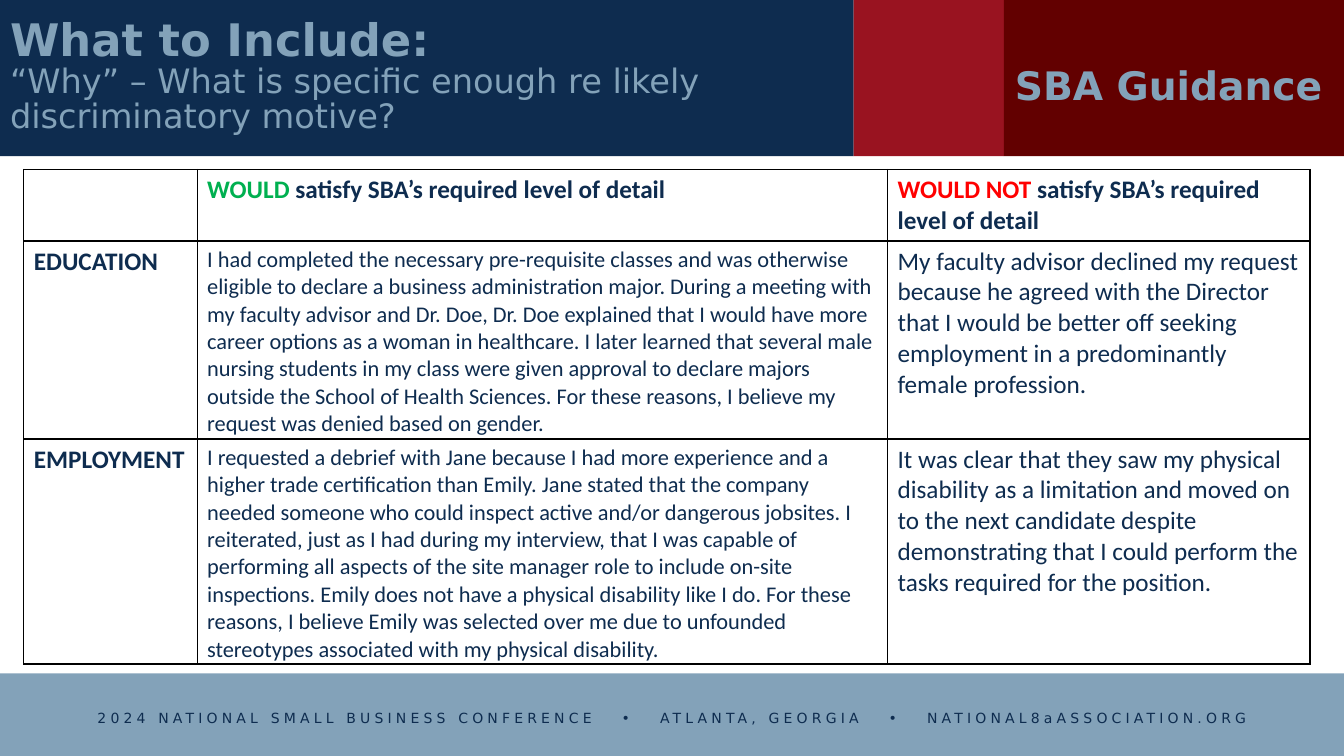
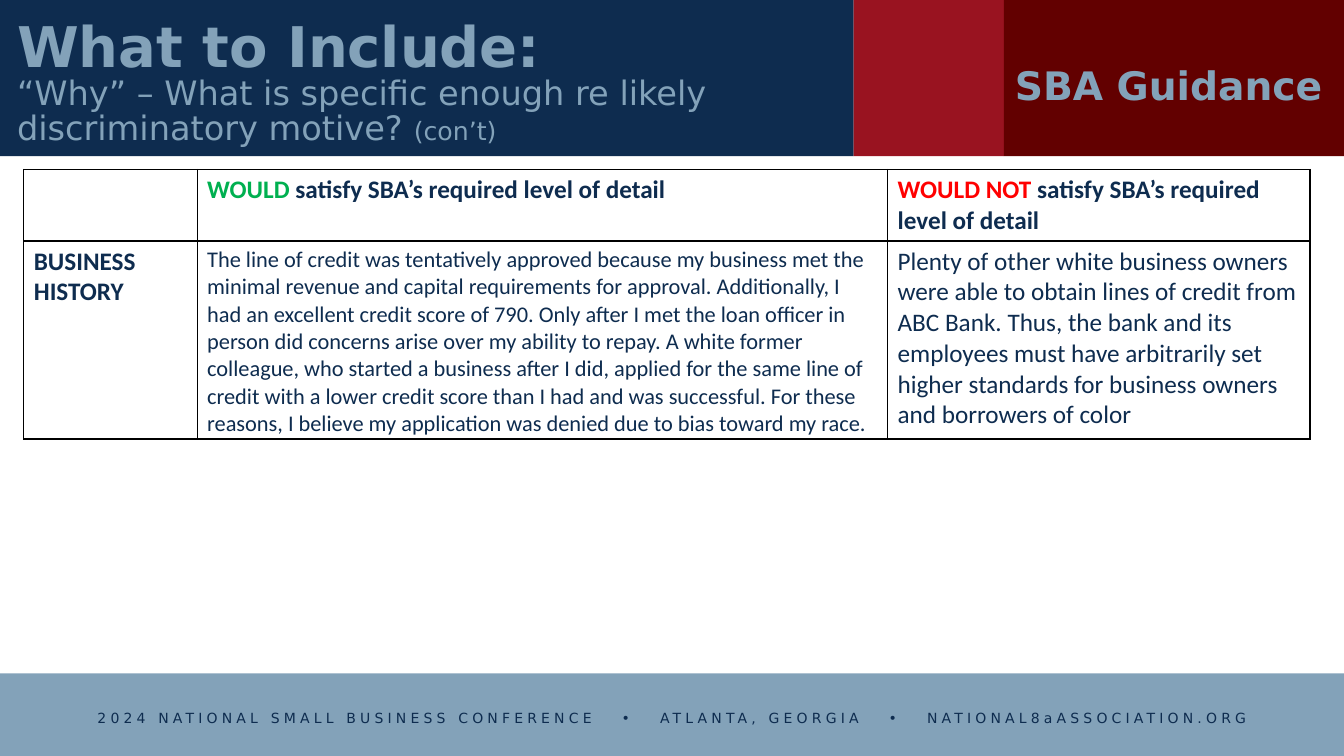
"""Build two conference slides that compare sufficient and insufficient statements of motive."""

import copy
import dataclasses
from typing import NamedTuple

import lxml.etree
import pptx
import pptx.dml.color
import pptx.enum.shapes
import pptx.enum.text
import pptx.oxml.ns
import pptx.shapes.autoshape
import pptx.slide
import pptx.table
import pptx.text.text
import pptx.util

Pt = pptx.util.Pt
Color = pptx.dml.color.RGBColor
qn = pptx.oxml.ns.qn


@dataclasses.dataclass(frozen=True)
class Theme:
    navy: Color = Color(0x0E, 0x2C, 0x4F)
    red: Color = Color(0x99, 0x13, 0x20)
    maroon: Color = Color(0x62, 0x00, 0x00)
    steel: Color = Color(0x83, 0xA2, 0xB9)
    good: Color = Color(0x00, 0xB0, 0x50)
    bad: Color = Color(0xFF, 0x00, 0x00)
    border: Color = Color(0x00, 0x00, 0x00)
    heading_font: str = "DejaVu Sans"
    table_font: str = "Calibri"
    subtitle_size: float = 24
    tag_size: float = 28
    large_size: float = 18
    detail_size: float = 16
    footer_size: float = 10
    title_spacing: float = 0.85


THEME = Theme()


class Box(NamedTuple):
    left: float
    top: float
    width: float
    height: float

    def lengths(self) -> list[int]:
        return [Pt(value) for value in self]


class Band(NamedTuple):
    box: Box
    color: Color


class Span(NamedTuple):
    text: str
    size: float
    color: Color = THEME.navy
    bold: bool = False
    font: str = THEME.table_font
    line_break: bool = False


class Row(NamedTuple):
    label: str
    would: list[str]
    would_not: str
    height: float


class Page(NamedTuple):
    title_box: Box
    title: list[Span]
    rows: list[Row]


BANDS = [
    Band(Box(0, 0, 609.8, 111.6), THEME.navy),
    Band(Box(609.8, 0, 107.3, 111.6), THEME.red),
    Band(Box(717.1, 0, 242.9, 111.6), THEME.maroon),
    Band(Box(0, 481, 960, 59), THEME.steel),
]
FOOTER_BOX = Box(0, 503.3, 960, 19.4)
FOOTER = "2024 NATIONAL SMALL BUSINESS CONFERENCE   •   ATLANTA, GEORGIA   •   NATIONAL8aASSOCIATION.ORG"
TAG_BOX = Box(717.8, 0, 236.2, 81)
TABLE_LEFT, TABLE_TOP = 17, 121
COLUMN_WIDTHS = [123.8, 493.2, 301.7]
HEADER_HEIGHT = 50.4


def heading(text: str, size: float, bold: bool = False, line_break: bool = False) -> Span:
    return Span(text, size, THEME.steel, bold, THEME.heading_font, line_break)


SUBTITLE = "“Why” – What is specific enough re likely discriminatory motive?"
PAGES = [
    Page(
        Box(0, 19.4, 607.7, 80.6),
        [
            heading("What to Include:", 32, True),
            heading(" ", 36, True, True),
            heading(SUBTITLE, THEME.subtitle_size),
        ],
        [
            Row(
                "EDUCATION",
                [
                    "I had completed the necessary pre-requisite classes and was otherwise eligible to declare a "
                    "business administration major. During a meeting with",
                    "my faculty advisor and Dr. Doe, Dr. Doe explained that I would have more career options as a "
                    "woman in healthcare. I later learned that several male nursing students in my class were given "
                    "approval to declare majors outside the School of Health Sciences. For these reasons, I believe "
                    "my request was denied based on gender.",
                ],
                "My faculty advisor declined my request because he agreed with the Director that I would be better "
                "off seeking employment in a predominantly female profession.",
                141.4,
            ),
            Row(
                "EMPLOYMENT",
                [
                    "I requested a debrief with Jane because I had more experience and a higher trade certification "
                    "than Emily. Jane stated that the company needed someone who could inspect active and/or "
                    "dangerous jobsites. I reiterated, just as I had during my interview, that I was capable of "
                    "performing all aspects of the site manager role to include on-site inspections. Emily does not "
                    "have a physical disability like I do. For these reasons, I believe Emily was selected over me "
                    "due to unfounded stereotypes associated with my physical disability.",
                ],
                "It was clear that they saw my physical disability as a limitation and moved on to the next "
                "candidate despite demonstrating that I could perform the tasks required for the position.",
                160.7,
            ),
        ],
    ),
    Page(
        Box(5, 19.4, 607.7, 89.3),
        [
            heading("What to Include: ", 40, True, True),
            heading(SUBTITLE + " ", THEME.subtitle_size),
            heading("(con’t)", THEME.large_size),
        ],
        [
            Row(
                "BUSINESS HISTORY",
                [
                    "The line of credit was tentatively approved because my business met the minimal revenue and "
                    "capital requirements for approval. Additionally, I had an excellent credit score of 790. Only "
                    "after I met the loan officer in",
                    "person did concerns arise over my ability to repay. A white former colleague, who started a "
                    "business after I did, applied for the same line of credit with a lower credit score than I had "
                    "and was successful. For these reasons, I believe my application was denied due to bias toward "
                    "my race.",
                ],
                "Plenty of other white business owners were able to obtain lines of credit from ABC Bank. Thus, the "
                "bank and its employees must have arbitrarily set higher standards for business owners and "
                "borrowers of color",
                141.4,
            ),
        ],
    ),
]


def write_spans(paragraph: pptx.text.text._Paragraph, spans: list[Span]) -> None:
    for span in spans:
        run = paragraph.add_run()
        run.text = span.text
        run.font.size = Pt(span.size)
        run.font.name = span.font
        run.font.bold = span.bold
        run.font.color.rgb = span.color
        if span.line_break:
            paragraph.add_line_break()
            paragraph._p[-1].append(copy.deepcopy(run.font._element))


def write_heading(shape: pptx.shapes.autoshape.Shape, spans: list[Span]) -> None:
    frame = shape.text_frame
    frame.word_wrap = True
    frame.auto_size = pptx.enum.text.MSO_AUTO_SIZE.NONE
    frame.vertical_anchor = pptx.enum.text.MSO_ANCHOR.BOTTOM
    paragraph = frame.paragraphs[0]
    paragraph.alignment = pptx.enum.text.PP_ALIGN.LEFT
    paragraph.line_spacing = THEME.title_spacing
    write_spans(paragraph, spans)


def add_shared_parts(slide: pptx.slide.Slide) -> None:
    """Draw the bands, footer and tag, then move them to the slide's layout."""
    shapes = []
    for band in BANDS:
        shape = slide.shapes.add_shape(pptx.enum.shapes.MSO_SHAPE.RECTANGLE, *band.box.lengths())
        shape.shadow.inherit = False
        shape.fill.solid()
        shape.fill.fore_color.rgb = band.color
        shape.line.fill.background()
        shapes.append(shape)

    footer = slide.shapes.add_textbox(*FOOTER_BOX.lengths())
    footer.text_frame.word_wrap = True
    paragraph = footer.text_frame.paragraphs[0]
    paragraph.alignment = pptx.enum.text.PP_ALIGN.CENTER
    write_spans(paragraph, [Span(FOOTER, THEME.footer_size, font=THEME.heading_font)])
    paragraph.runs[0].font._element.set("spc", "300")
    shapes.append(footer)

    tag = slide.shapes.add_textbox(*TAG_BOX.lengths())
    write_heading(tag, [heading("SBA Guidance", THEME.tag_size, True)])
    shapes.append(tag)

    for number, shape in enumerate(shapes, start=101):
        shape.element.nvSpPr.cNvPr.set("id", str(number))
        slide.slide_layout.shapes.element.append(shape.element)


def set_borders(cell: pptx.table._Cell) -> None:
    properties = cell._tc.get_or_add_tcPr()
    for side in ("a:lnL", "a:lnR", "a:lnT", "a:lnB"):
        line = lxml.etree.SubElement(properties, qn(side), w=str(Pt(1)))
        fill = lxml.etree.SubElement(line, qn("a:solidFill"))
        lxml.etree.SubElement(fill, qn("a:srgbClr"), val=str(THEME.border))


def fill_cell(cell: pptx.table._Cell, paragraphs: list[list[Span]]) -> None:
    set_borders(cell)
    cell.fill.background()
    for index, spans in enumerate(paragraphs):
        frame = cell.text_frame
        write_spans(frame.add_paragraph() if index else frame.paragraphs[0], spans)


def add_comparison(slide: pptx.slide.Slide, rows: list[Row]) -> None:
    heights = [HEADER_HEIGHT] + [row.height for row in rows]
    box = Box(TABLE_LEFT, TABLE_TOP, sum(COLUMN_WIDTHS), sum(heights))
    table = slide.shapes.add_table(len(heights), len(COLUMN_WIDTHS), *box.lengths()).table
    table.first_row = table.horz_banding = False
    for column, width in zip(table.columns, COLUMN_WIDTHS):
        column.width = Pt(width)

    large = THEME.large_size
    contents = [[
        [],
        [[Span("WOULD", large, THEME.good, True), Span(" satisfy SBA’s required level of detail", large, bold=True)]],
        [[Span("WOULD NOT ", large, THEME.bad, True), Span("satisfy SBA’s required level of detail", large, bold=True)]],
    ]]
    for row in rows:
        contents.append([
            [[Span(row.label, large, bold=True)]],
            [[Span(text, THEME.detail_size)] for text in row.would],
            [[Span(row.would_not, large)]],
        ])
    for row_index, (height, row_contents) in enumerate(zip(heights, contents)):
        table.rows[row_index].height = Pt(height)
        for column_index, paragraphs in enumerate(row_contents):
            cell = table.cell(row_index, column_index)
            fill_cell(cell, paragraphs)
            if row_index:
                cell.margin_bottom = Pt(0)


def main() -> None:
    presentation = pptx.Presentation()
    presentation.slide_width, presentation.slide_height = Pt(960), Pt(540)
    layout = presentation.slide_layouts[5]
    for index, page in enumerate(PAGES):
        slide = presentation.slides.add_slide(layout)
        if index == 0:
            add_shared_parts(slide)
        title = slide.shapes.title
        title.left, title.top, title.width, title.height = page.title_box.lengths()
        write_heading(title, page.title)
        add_comparison(slide, page.rows)
    presentation.save("out.pptx")


if __name__ == "__main__":
    main()
